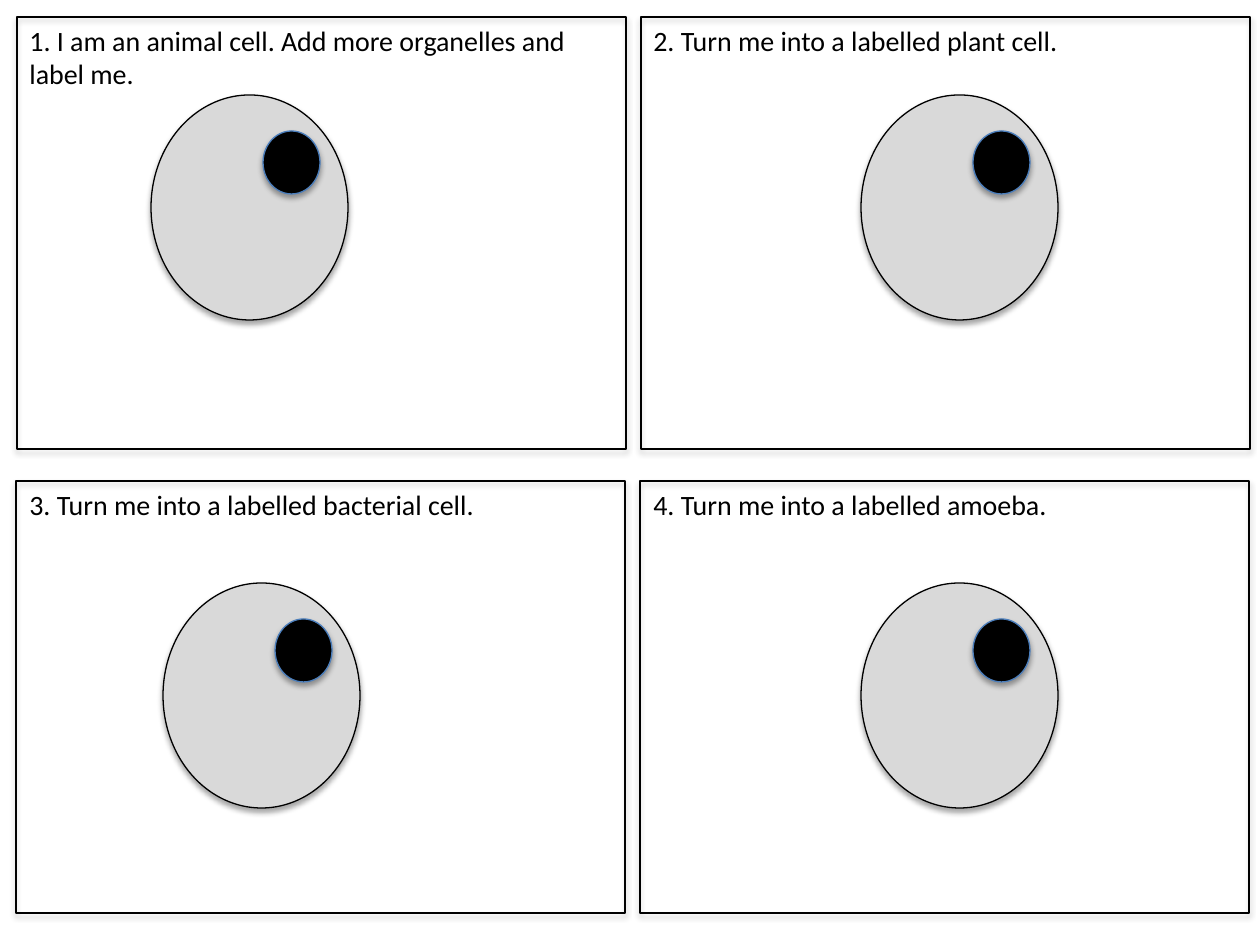
from lxml.etree import SubElement
from pptx import Presentation
from pptx.dml.color import RGBColor
from pptx.enum.shapes import MSO_SHAPE
from pptx.enum.text import MSO_AUTO_SIZE
from pptx.oxml.ns import qn
from pptx.util import Emu, Pt


def lengths(*pixels):
    return [Emu(round(value * 914400 / 126)) for value in pixels]


def add_shadowed(kind, box, fill, line):
    shape = slide.shapes.add_shape(kind, *lengths(*box))
    if fill:
        shape.fill.solid()
        shape.fill.fore_color.rgb = RGBColor.from_string(fill)
    else:
        shape.fill.background()
    shape.line.color.rgb = RGBColor.from_string(line)
    shape.line.width = Pt(0.75)
    shape.shadow.inherit = False
    effects = shape._element.spPr.find(qn("a:effectLst"))
    shadow = SubElement(effects, qn("a:outerShdw"), blurRad=str(Pt(3.1)),
                        dist=str(Pt(1.8)), dir="5400000", rotWithShape="0")
    color = SubElement(shadow, qn("a:srgbClr"), val="000000")
    SubElement(color, qn("a:alpha"), val="35000")


presentation = Presentation()
presentation.slide_width, presentation.slide_height = lengths(1260, 945)
slide = presentation.slides.add_slide(presentation.slide_layouts[6])

for left, top in [(151, 95), (861, 95), (163, 583), (861, 583)]:
    add_shadowed(MSO_SHAPE.OVAL, (left, top, 197, 225), "D9D9D9", "000000")
    add_shadowed(MSO_SHAPE.OVAL, (left + 112, top + 36, 57, 63), "000000", "4B7EBC")

for left, top in [(641, 17), (640, 481), (17, 17), (16, 481)]:
    add_shadowed(MSO_SHAPE.RECTANGLE, (left, top, 609, 432), None, "000000")

tasks = [
    ("2. Turn me into a labelled plant cell.", 641, 17, 481, 47),
    ("3. Turn me into a labelled bacterial cell.", 17, 481, 481, 47),
    ("4. Turn me into a labelled amoeba.", 641, 481, 481, 47),
    ("1. I am an animal cell. Add more organelles and label me.", 17, 17, 612, 81),
]
for text, *box in tasks:
    text_frame = slide.shapes.add_textbox(*lengths(*box)).text_frame
    text_frame.word_wrap = True
    text_frame.auto_size = MSO_AUTO_SIZE.SHAPE_TO_FIT_TEXT
    paragraph = text_frame.paragraphs[0]
    paragraph.text = text
    paragraph.font.name = "Calibri"
    paragraph.font.size = Pt(16)
    paragraph.font.color.rgb = RGBColor.from_string("000000")

presentation.save("out.pptx")
